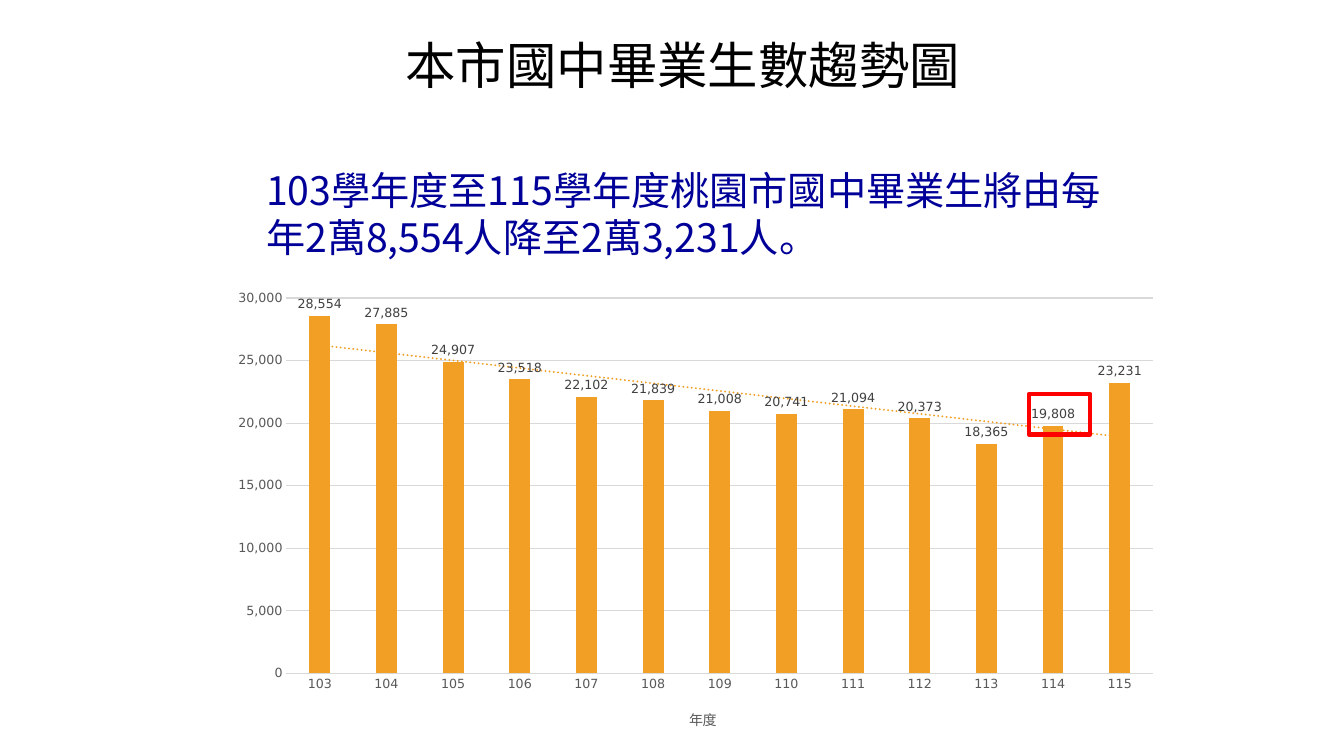
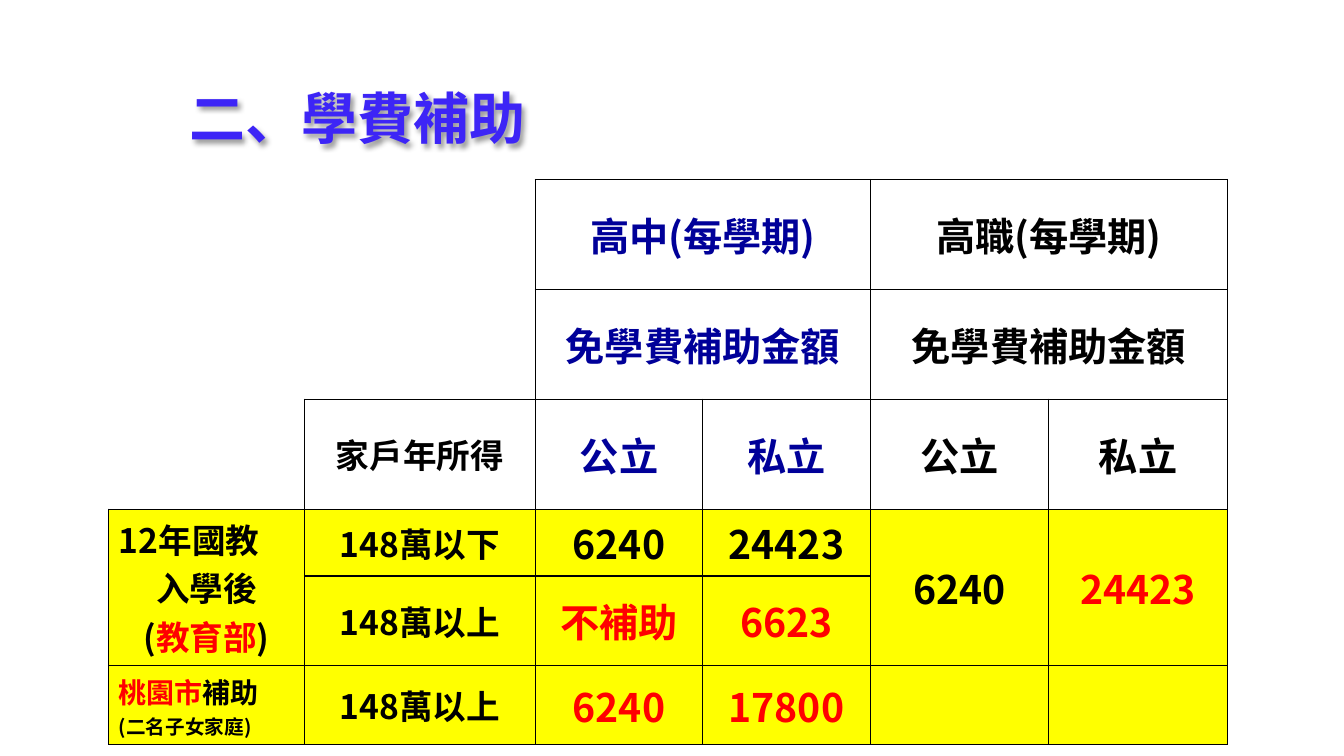
from lxml import etree
from pptx import Presentation
from pptx.chart.data import CategoryChartData as Data
from pptx.dml.color import RGBColor as Rgb
from pptx.enum.chart import XL_CHART_TYPE as Kind, XL_LABEL_POSITION as Spot, XL_TICK_MARK as Tick
from pptx.enum.dml import MSO_LINE
from pptx.enum.shapes import MSO_SHAPE as Form
from pptx.enum.text import MSO_ANCHOR as Anchor, MSO_AUTO_SIZE as Auto, PP_ALIGN as Align
from pptx.oxml import parse_xml
from pptx.oxml.ns import qn
from pptx.util import Cm, Pt

BLACK = Rgb(0, 0, 0)
NAVY = Rgb(0, 0, 0x99)
RED = Rgb(0xFF, 0, 0)
VIOLET = Rgb(0x3D, 0x25, 0xF6)
YELLOW = Rgb(0xFF, 0xFF, 0)
ORANGE = Rgb(0xF2, 0x9F, 0x26)
GRID = Rgb(0xD9, 0xD9, 0xD9)
GREY = Rgb(0x59, 0x59, 0x59)
DARK = Rgb(0x40, 0x40, 0x40)
FONT = "Noto Sans CJK SC"
PLAIN = "DejaVu Sans"
SPACES = ('xmlns:a="http://schemas.openxmlformats.org/drawingml/2006/main" '
          'xmlns:c="http://schemas.openxmlformats.org/drawingml/2006/chart"')

TREND = "本市國中畢業生數趨勢圖"
LEAD = "103學年度至115學年度桃園市國中畢業生將由每年2萬8,554人降至2萬3,231人。"
AXIS = "年度"
FIRST = 103
COUNTS = [28554, 27885, 24907, 23518, 22102, 21839, 21008,
          20741, 21094, 20373, 18365, 19808, 23231]

GRANT = "二、學費補助"
COLS = [4.93, 5.82, 4.22, 4.22, 4.5, 4.5]
ROWS = [2.77, 2.77, 2.77, 1.63, 2.08, 1.98]
MERGED = [(0, 2, 0, 3), (0, 4, 0, 5), (1, 2, 1, 3), (1, 4, 1, 5),
          (3, 0, 4, 0), (3, 4, 4, 4), (3, 5, 4, 5)]
BLANK = {(0, 0), (0, 1), (1, 0), (1, 1), (2, 0)}
CELLS = [
    (0, 2, "高中(每學期)", 28, NAVY),
    (0, 4, "高職(每學期)", 28, BLACK),
    (1, 2, "免學費補助金額", 28, NAVY),
    (1, 4, "免學費補助金額", 28, BLACK),
    (2, 1, "家戶年所得", 24, BLACK),
    (2, 2, "公立", 28, NAVY),
    (2, 3, "私立", 28, NAVY),
    (2, 4, "公立", 28, BLACK),
    (2, 5, "私立", 28, BLACK),
    (3, 1, "148萬以下", 24, BLACK),
    (3, 2, "6240", 28, BLACK),
    (3, 3, "24423", 28, BLACK),
    (3, 4, "6240", 28, BLACK),
    (3, 5, "24423", 28, RED),
    (4, 1, "148萬以上", 24, BLACK),
    (4, 2, "不補助", 28, RED),
    (4, 3, "6623", 28, RED),
    (5, 1, "148萬以上", 24, BLACK),
    (5, 2, "6240", 28, RED),
    (5, 3, "17800", 28, RED),
]
STATE = [
    (Align.LEFT, [("12年國教", 24, BLACK)]),
    (Align.CENTER, [("入學後", 24, BLACK)]),
    (Align.CENTER, [("(", 24, BLACK), ("教育部", 24, RED), (")", 24, BLACK)]),
]
CITY = [
    (Align.LEFT, [("桃園市", 20, RED), ("補助", 20, BLACK)]),
    (Align.LEFT, [("(二名子女家庭)", 14, BLACK)]),
]


def style(font, size, color, name=PLAIN, bold=False):
    font.size, font.name, font.bold = Pt(size), name, bold
    font.color.rgb = color


def write(frame, text, size=28, color=BLACK, align=Align.LEFT,
          bold=False, anchor=Anchor.MIDDLE):
    paras = [(align, [(text, size, color)])] if isinstance(text, str) else text
    frame.word_wrap = True
    frame.vertical_anchor = anchor
    for i, (side, runs) in enumerate(paras):
        para = frame.paragraphs[0] if i == 0 else frame.add_paragraph()
        para.alignment = side
        for words, points, tint in runs:
            run = para.add_run()
            run.text = words
            style(run.font, points, tint, FONT, bold)
            etree.SubElement(run.font._element, qn("a:ea"), typeface=FONT)


def place(shape, left, top, width, height):
    shape.left, shape.top = Cm(left), Cm(top)
    shape.width, shape.height = Cm(width), Cm(height)


def titled(deck, text, box, **form):
    slide = deck.slides.add_slide(deck.slide_layouts[5])
    title = slide.shapes.title
    place(title, *box)
    title.text_frame.auto_size = Auto.NONE
    write(title.text_frame, text, anchor=Anchor.TOP, **form)
    return slide


def layout(x, y, w=None, h=None):
    inner = '<c:layoutTarget val="inner"/>' if w else ""
    modes = '<c:xMode val="edge"/><c:yMode val="edge"/>'
    sizes = zip("xywh", (x, y, w, h))
    parts = "".join(f'<c:{k} val="{v}"/>' for k, v in sizes if v is not None)
    return parse_xml(f"<c:layout {SPACES}><c:manualLayout>{inner}{modes}{parts}"
                     "</c:manualLayout></c:layout>")


def set_layout(node, new):
    old = node.find(qn("c:layout"))
    if old is not None:
        node.remove(old)
    first = node.find(qn("c:tx"))
    node.insert(0 if first is None else 1, new)


def plot(slide):
    data = Data(number_format="#,##0")
    data.categories = [str(FIRST + i) for i in range(len(COUNTS))]
    data.add_series("Series 1", COUNTS)
    chart = slide.shapes.add_chart(Kind.COLUMN_CLUSTERED, Cm(5.54), Cm(7.16),
                                   Cm(24), Cm(11.68), data).chart
    style(chart.font, 10, BLACK)
    chart.has_legend = chart.has_title = False
    bars = chart.plots[0]
    bars.vary_by_categories = False
    bars.gap_width, bars.overlap = 219, -27
    row = bars.series[0]
    row.format.fill.solid()
    row.format.fill.fore_color.rgb = ORANGE
    tags = row.data_labels
    tags.show_value, tags.position = True, Spot.OUTSIDE_END
    tags.number_format, tags.number_format_is_linked = "#,##0", False
    style(tags.font, 9, DARK)
    trend = parse_xml(
        f'<c:trendline {SPACES}><c:spPr><a:ln w="19050" cap="rnd"><a:solidFill>'
        f'<a:srgbClr val="{ORANGE}"/></a:solidFill><a:prstDash val="sysDot"/></a:ln>'
        '</c:spPr><c:trendlineType val="linear"/><c:dispRSqr val="0"/>'
        '<c:dispEq val="0"/></c:trendline>')
    row._element.find(qn("c:cat")).addprevious(trend)

    years, scale = chart.category_axis, chart.value_axis
    for axis in (years, scale):
        axis.major_tick_mark = axis.minor_tick_mark = Tick.NONE
        style(axis.tick_labels.font, 9, GREY)
    scale.minimum_scale, scale.maximum_scale, scale.major_unit = 0, 30000, 5000
    scale.tick_labels.number_format = "#,##0"
    scale.tick_labels.number_format_is_linked = False
    scale.format.line.fill.background()
    for line in (years.format.line, scale.major_gridlines.format.line):
        line.color.rgb, line.width = GRID, Pt(0.75)
    years.has_title = True
    write(years.axis_title.text_frame, AXIS, size=10, color=GREY)
    set_layout(years.axis_title._element, layout(0.49, 0.91))
    set_layout(chart._chartSpace.chart.plotArea, layout(0.07, 0.03, 0.91, 0.81))


def edge(cell, side, drawn):
    line = etree.SubElement(cell._tc.get_or_add_tcPr(), qn(f"a:ln{side}"), w="12700")
    if drawn:
        fill = etree.SubElement(line, qn("a:solidFill"))
        etree.SubElement(fill, qn("a:srgbClr"), val=str(BLACK))
    else:
        etree.SubElement(line, qn("a:noFill"))


def grid(slide):
    table = slide.shapes.add_table(len(ROWS), len(COLS), Cm(2.74), Cm(4.52),
                                   Cm(sum(COLS)), Cm(sum(ROWS))).table
    table.first_row = table.horz_banding = False
    for col, width in zip(table.columns, COLS):
        col.width = Cm(width)
    for row, height in zip(table.rows, ROWS):
        row.height = Cm(height)
    for r in range(len(ROWS)):
        for c in range(len(COLS)):
            cell = table.cell(r, c)
            blank = (r, c) in BLANK
            near = {"L": (r, c - 1), "R": (r, c + 1), "T": (r - 1, c), "B": (r + 1, c)}
            for side, spot in near.items():
                inside = min(spot) >= 0
                edge(cell, side, not blank or (inside and spot not in BLANK))
            if r > 2:
                cell.fill.solid()
                cell.fill.fore_color.rgb = YELLOW
            else:
                cell.fill.background()
    for top, left, low, right in MERGED:
        table.cell(top, left).merge(table.cell(low, right))
    for r, c, text, size, color in CELLS:
        write(table.cell(r, c).text_frame, text, size=size, color=color,
              align=Align.CENTER, bold=True)
        table.cell(r, c).vertical_anchor = Anchor.MIDDLE
    for r, text in ((3, STATE), (5, CITY)):
        write(table.cell(r, 0).text_frame, text, bold=True)
        table.cell(r, 0).vertical_anchor = Anchor.MIDDLE


def trend_slide(deck):
    slide = titled(deck, TREND, (9.32, 0.74, 15.77, 1.8), size=36, align=Align.CENTER)
    lead = slide.shapes.add_textbox(Cm(6.53), Cm(4.09), Cm(22.2), Cm(2.59)).text_frame
    lead.margin_left = lead.margin_right = Cm(0.18)
    lead.margin_top = lead.margin_bottom = Cm(0.1)
    write(lead, LEAD, color=NAVY)
    plot(slide)
    frame = slide.shapes.add_shape(Form.RECTANGLE, Cm(25.93), Cm(9.93), Cm(1.55), Cm(1.02))
    frame.shadow.inherit = False
    frame.fill.background()
    frame.line.color.rgb, frame.line.width = RED, Pt(3)
    frame.line.dash_style = MSO_LINE.SOLID


def grant_slide(deck):
    slide = titled(deck, GRANT, (4.52, 1.98, 14.99, 2.13), size=40, color=VIOLET, bold=True)
    slide.shapes.title._element.spPr.append(parse_xml(
        f'<a:effectLst {SPACES}><a:outerShdw blurRad="50800" dist="38100" dir="2700000" '
        f'algn="tl" rotWithShape="0"><a:srgbClr val="{BLACK}"><a:alpha val="40000"/>'
        '</a:srgbClr></a:outerShdw></a:effectLst>'))
    grid(slide)


def main():
    deck = Presentation()
    deck.slide_width, deck.slide_height = Cm(33.87), Cm(19.05)
    trend_slide(deck)
    grant_slide(deck)
    deck.save("out.pptx")


if __name__ == "__main__":
    main()
